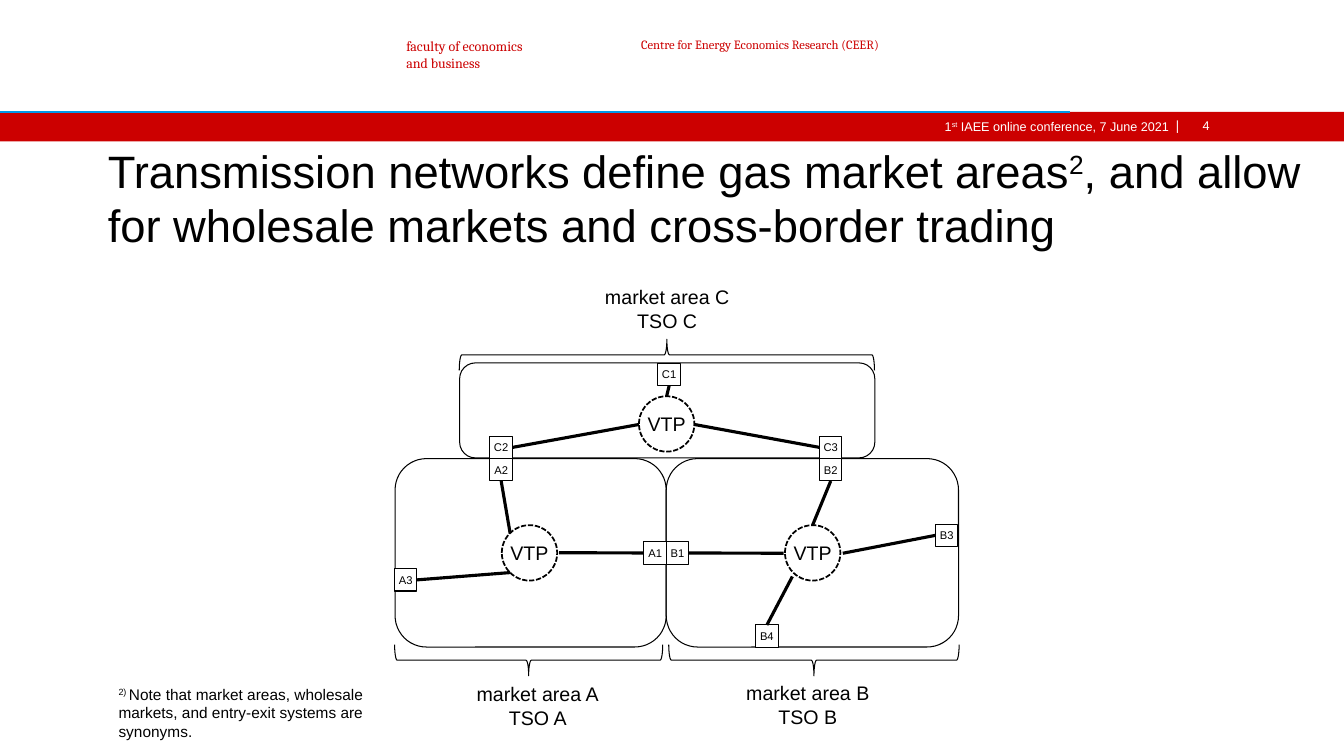
from dataclasses import dataclass

from lxml import etree
from pptx import Presentation
from pptx.dml.color import RGBColor
from pptx.enum.dml import MSO_LINE
from pptx.enum.shapes import MSO_CONNECTOR, MSO_SHAPE
from pptx.enum.text import MSO_ANCHOR, MSO_AUTO_SIZE, PP_ALIGN
from pptx.oxml.ns import qn
from pptx.util import Pt

RECT, ROUNDED = MSO_SHAPE.RECTANGLE, MSO_SHAPE.ROUNDED_RECTANGLE
OVAL, BRACE = MSO_SHAPE.OVAL, MSO_SHAPE.LEFT_BRACE
STRAIGHT, DASHED = MSO_CONNECTOR.STRAIGHT, MSO_LINE.SQUARE_DOT
LEFT, CENTER, RIGHT = PP_ALIGN.LEFT, PP_ALIGN.CENTER, PP_ALIGN.RIGHT
TOP, MIDDLE = MSO_ANCHOR.TOP, MSO_ANCHOR.MIDDLE
NO_FIT = MSO_AUTO_SIZE.NONE
TOP_SIDE, LEFT_SIDE, BOTTOM_SIDE, RIGHT_SIDE = range(4)

NO_MARGINS = (0, 0, 0, 0)
TEXT_MARGINS = (7.2, 3.6, 7.2, 3.6)
NODE_SIZE, HUB_SIZE, BRACE_DEPTH = 16, 39.6, 22.3


@dataclass
class Theme:
    black: RGBColor = RGBColor(0, 0, 0)
    white: RGBColor = RGBColor(255, 255, 255)
    red: RGBColor = RGBColor(0xCC, 0, 0)
    blue: RGBColor = RGBColor(0, 0x99, 0xEA)
    sans: str = "Arial"
    serif: str = "Cambria"
    divider: str = "DejaVu Sans"
    title: float = 32.4
    label: float = 14
    note: float = 11
    faculty: float = 10
    header: float = 9
    node: float = 8
    thin: float = 0.75
    dash: float = 1.25
    thick: float = 2.25


class SlideBuilder:
    def __init__(self, page, theme):
        self.page = page
        self.theme = theme

    def set_text(self, box, paragraphs, size, color=None, font=None, align=LEFT,
                 anchor=TOP, margins=NO_MARGINS, wrap=True):
        """Fill a box with text; parts between ^ marks are superscript."""
        frame = box.text_frame
        sides = ("margin_left", "margin_top", "margin_right", "margin_bottom")
        layout = dict(zip(sides, map(Pt, margins)))
        layout.update(word_wrap=wrap, vertical_anchor=anchor, auto_size=NO_FIT)
        for name, value in layout.items():
            setattr(frame, name, value)
        formats = {"name": font or self.theme.sans, "size": Pt(size)}
        for index, text in enumerate(paragraphs):
            para = frame.add_paragraph() if index else frame.paragraphs[0]
            para.alignment = align
            for position, part in enumerate(text.split("^")):
                if not part:
                    continue
                span = para.add_run()
                span.text = part
                for name, value in formats.items():
                    setattr(span.font, name, value)
                span.font.color.rgb = color or self.theme.black
                if position % 2:
                    span.font._element.set("baseline", "30000")

    def title(self, text, left, top, width, height, margins):
        box = self.page.shapes.title
        for name, value in zip(("left", "top", "width", "height"),
                               (left, top, width, height)):
            setattr(box, name, Pt(value))
        self.set_text(box, [text], self.theme.title, anchor=MIDDLE, margins=margins)

    def text(self, paragraphs, left, top, width, height, size, **options):
        box = self.page.shapes.add_textbox(*map(Pt, (left, top, width, height)))
        self.set_text(box, paragraphs, size, **options)

    def shape(self, kind, left, top, width, height, fill=None, weight=None):
        shape = self.page.shapes.add_shape(kind, *map(Pt, (left, top, width, height)))
        shape.shadow.inherit = False
        if fill is None:
            shape.fill.background()
        else:
            shape.fill.solid()
            shape.fill.fore_color.rgb = fill
        if weight is None:
            shape.line.fill.background()
        else:
            shape.line.color.rgb = self.theme.black
            shape.line.width = Pt(weight)
        return shape

    def node(self, name, left, top):
        box = self.shape(RECT, left, top, NODE_SIZE, NODE_SIZE,
                         self.theme.white, self.theme.thin)
        self.set_text(box, [name], self.theme.node, align=CENTER, anchor=MIDDLE, wrap=False)
        return box

    def hub(self, left, top):
        circle = self.shape(OVAL, left, top, HUB_SIZE, HUB_SIZE, weight=self.theme.dash)
        circle.line.dash_style = DASHED
        self.set_text(circle, ["VTP"], self.theme.label, align=CENTER, anchor=MIDDLE, wrap=False)

    def brace(self, left, top, length, rotation):
        """Place a lying brace by its visible left, top and length."""
        shift = (length - BRACE_DEPTH) / 2
        shape = self.shape(BRACE, left + shift, top - shift, BRACE_DEPTH, length,
                           weight=self.theme.thin)
        shape.rotation = rotation

    def line(self, start, end, color, weight):
        line = self.page.shapes.add_connector(STRAIGHT, *map(Pt, (*start, *end)))
        line.line.color.rgb = color
        line.line.width = Pt(weight)
        etree.SubElement(line.element.spPr, qn("a:effectLst"))
        return line

    def pipeline(self, node, side, hub_point):
        line = self.line(hub_point, hub_point, self.theme.black, self.theme.thick)
        line.end_connect(node, side)


# Left, top, width, height of each area; then its brace and its label
AREAS = {
    "A": ((282.2, 327.6, 193.7, 134.6), (281.9, 460.4, 191.5, 270), (290.9, 483.8, 186.5)),
    "B": ((475.9, 327.6, 208.8, 134.6), (477.7, 460.4, 207.4, 270), (484.6, 483.1, 185)),
    "C": ((328.3, 259.2, 296.6, 67.9), (328, 242.3, 296.6, 90), (328.3, 200.2, 296.6)),
}
HUBS = [(358.4, 375.1), (560.7, 375.1), (456.4, 283)]
# Node, left, top, joined side and the point where its pipeline meets the hub
NODES = [
    ("A1", 460, 387, LEFT_SIDE, (399.4, 394.8)),
    ("A2", 350, 327.6, BOTTOM_SIDE, (364.4, 381)),
    ("A3", 281.8, 406.2, RIGHT_SIDE, (364.4, 409)),
    ("B1", 476, 387, RIGHT_SIDE, (559.8, 395.2)),
    ("B2", 585.4, 327.6, BOTTOM_SIDE, (580.4, 375.2)),
    ("B3", 668.2, 374.4, LEFT_SIDE, (602, 395.2)),
    ("B4", 539.8, 446.4, TOP_SIDE, (566, 411.8)),
    ("C1", 470, 259.4, BOTTOM_SIDE, (476.2, 283)),
    ("C2", 350, 311.6, RIGHT_SIDE, (456.4, 303.2)),
    ("C3", 585.4, 311.6, LEFT_SIDE, (496, 303.2)),
]


def main():
    deck = Presentation()
    deck.slide_width, deck.slide_height = Pt(960), Pt(540)
    page = deck.slides.add_slide(deck.slide_layouts[5])
    theme = Theme()
    builder = SlideBuilder(page, theme)

    # Header
    builder.shape(RECT, 0, 80, 960, 21, theme.red)
    builder.line((0, 80), (764, 80), theme.blue, theme.thin)
    builder.text(["faculty of economics", "and business"], 290.2, 26.6, 91, 24.5,
                 theme.faculty, color=theme.red, font=theme.serif)
    builder.text(["Centre for Energy Economics Research (CEER)"], 457.9, 26.6, 230.4, 11,
                 theme.header, color=theme.red, font=theme.serif)
    builder.text(["1^st^ IAEE online conference, 7 June 2021"], 622, 84.8, 213, 11,
                 theme.header, color=theme.white, align=RIGHT)
    builder.text(["|"], 839.5, 84.2, 4.5, 11, theme.header,
                 color=theme.white, font=theme.divider)
    builder.text(["4"], 843.8, 84.2, 20.2, 11, theme.header,
                 color=theme.white, align=RIGHT)

    # Title and footnote
    builder.title("Transmission networks define gas market areas^2^, "
                  "and allow for wholesale markets and cross-border trading",
                  0, 101, 960, 80, (77, 3.6, 21.6, 3.6))
    builder.text(["^2) ^Note that market areas, wholesale markets, "
                  "and entry-exit systems are synonyms."],
                 77.6, 485.6, 192.2, 47.5, theme.note, margins=TEXT_MARGINS)

    # Market areas
    for name, (outline, brace, (left, top, width)) in AREAS.items():
        builder.shape(ROUNDED, *outline, weight=theme.thin)
        builder.brace(*brace)
        builder.text([f"market area {name}", f"TSO {name}"], left, top, width, 41,
                     theme.label, align=CENTER, margins=TEXT_MARGINS)

    # Trading points, network points and pipelines
    for hub in HUBS:
        builder.hub(*hub)
    for name, left, top, side, hub_point in NODES:
        builder.pipeline(builder.node(name, left, top), side, hub_point)

    deck.save("out.pptx")


if __name__ == "__main__":
    main()
